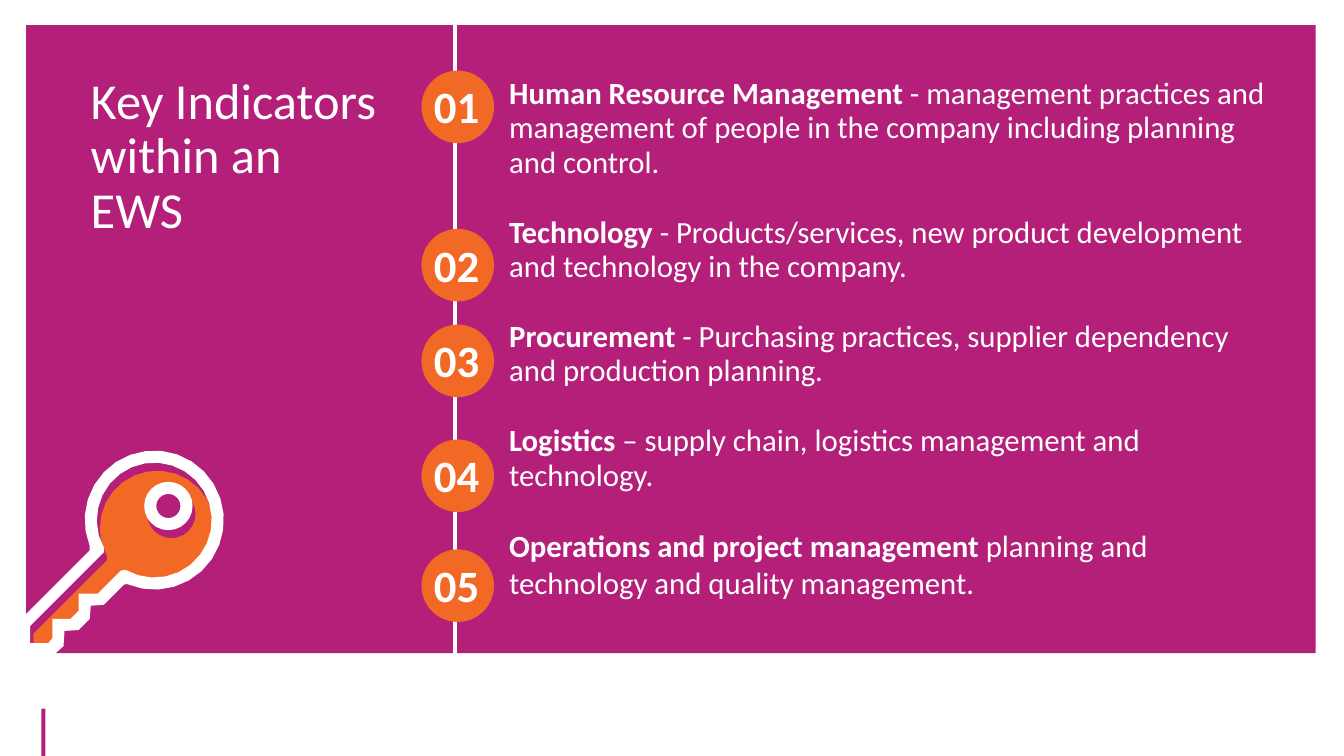
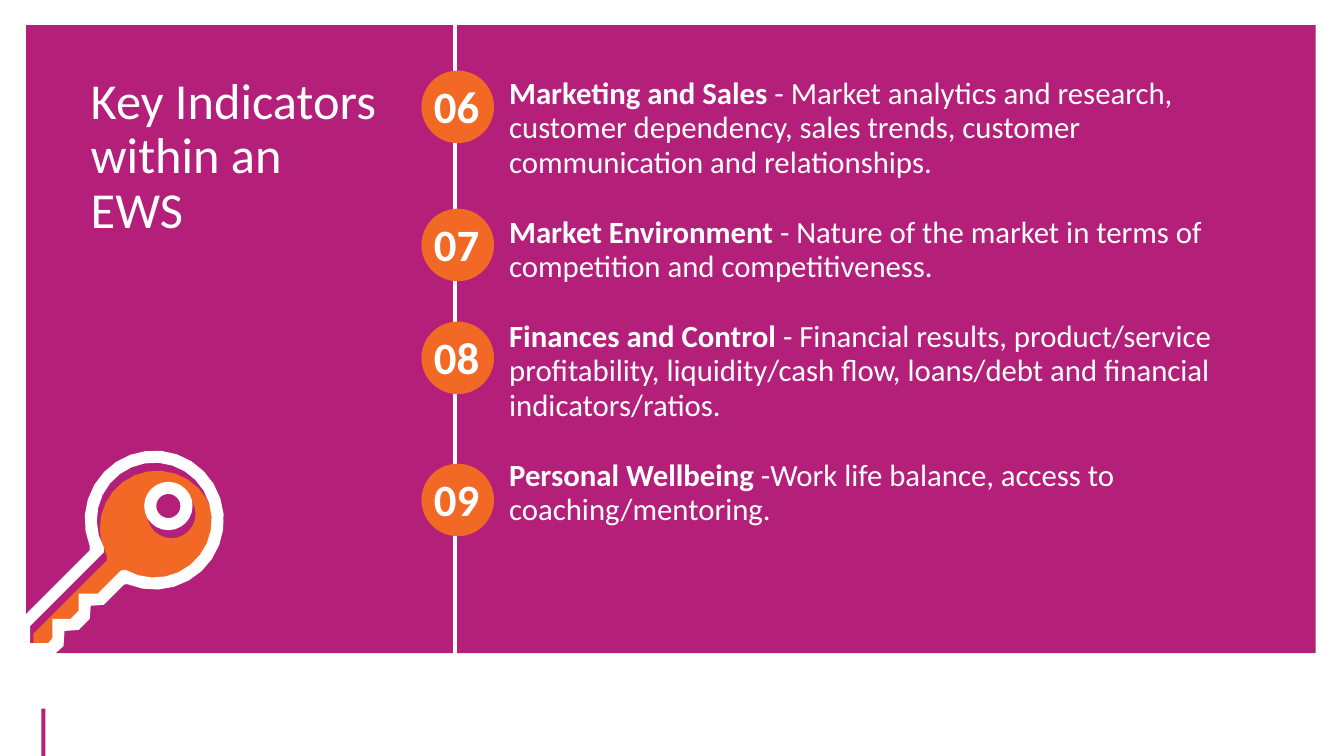
import math

from lxml import etree
from pptx import Presentation
from pptx.dml.color import RGBColor
from pptx.enum import shapes, text
from pptx.oxml import ns
from pptx.util import Inches, Pt

MAGENTA = RGBColor(0xB4, 0x1F, 0x7A)
ORANGE = RGBColor(0xF1, 0x69, 0x24)
WHITE = RGBColor(0xFF, 0xFF, 0xFF)
FONT = "Calibri"

HEADING = "Key Indicators within an EWS"
LINE_HEIGHT = Pt(24.8)
TOP = 0.7
SPINE_X = 4.51
MARKER_LEFT, MARKER_SIZE = 4.18, 0.72

# Key geometry, in inches on the page
BOW_CENTER = (1.53, 5.16)
EYE_CENTER = (1.67, 5.02)
EYE_RADIUS = 0.24
FILL_OFFSET = (0.03, 0.08)

# Each page: (number, top of marker, name, description)
PAGES = [
    [
        ("01", 0.7, "Human Resource Management ",
         "- management practices and management of people in the company "
         "including planning and control."),
        ("02", 2.27, "Technology",
         " - Products/services, new product development and technology in the company."),
        ("03", 3.22, "Procurement",
         " - Purchasing practices, supplier dependency and production planning."),
        ("04", 4.36, "Logistics",
         " – supply chain, logistics management and technology."),
        ("05", 5.45, "Operations and project management ",
         "planning and technology and quality management."),
    ],
    [
        ("06", 0.7, "Marketing and Sales ",
         "- Market analytics and research, customer dependency, sales trends, "
         "customer communication and relationships."),
        ("07", 2.07, "Market Environment ",
         "- Nature of the market in terms of competition and competitiveness."),
        ("08", 3.19, "Finances and Control ",
         "- Financial results, product/service profitability, liquidity/cash flow, "
         "loans/debt and financial indicators/ratios."),
        ("09", 4.6, "Personal Wellbeing ",
         "-Work life balance, access to coaching/mentoring."),
    ],
]


def paint(shape, color):
    shape.shadow.inherit = False
    shape.fill.solid()
    shape.fill.fore_color.rgb = color
    shape.line.fill.background()


def add_filled(page, kind, left, top, width, height, color):
    shape = page.shapes.add_shape(
        kind, Inches(left), Inches(top), Inches(width), Inches(height))
    paint(shape, color)
    return shape


def add_span(para, words, size, bold=False):
    span = para.add_run()
    span.text = words
    span.font.name = FONT
    span.font.size = Pt(size)
    span.font.bold = bold
    span.font.color.rgb = WHITE


def top_frame(placeholder):
    """Return the placeholder's text frame, wrapped and anchored at the top."""
    frame = placeholder.text_frame
    frame.word_wrap = True
    frame.auto_size = text.MSO_AUTO_SIZE.NONE
    frame.vertical_anchor = text.MSO_ANCHOR.TOP
    return frame


def place(placeholder, left, top, width, height):
    placeholder.left, placeholder.top = Inches(left), Inches(top)
    placeholder.width, placeholder.height = Inches(width), Inches(height)


def prepare_layout(layout, page):
    """Give the layout its band, footer accent and placeholder positions."""
    rectangle = shapes.MSO_SHAPE.RECTANGLE
    band = add_filled(page, rectangle, 0.26, 0.25, 12.79, 6.23, MAGENTA)
    accent = add_filled(page, rectangle, 0.41, 7.03, 0.04, 0.47, MAGENTA)
    for shape in (band, accent):
        layout.shapes.element.append(shape.element)
    place(layout.placeholders[0], 0.8, TOP, 3.12, 3.05)
    place(layout.placeholders[1], 4.5, TOP, 8.28, 6.8)


def add_heading(page):
    para = top_frame(page.shapes.title).paragraphs[0]
    para.alignment = text.PP_ALIGN.LEFT
    para.line_spacing = 0.9
    add_span(para, HEADING, 36)


def add_indicators(page, indicators):
    frame = top_frame(page.placeholders[1])
    for index, (number, _, name, description) in enumerate(indicators):
        para = frame.add_paragraph() if index else frame.paragraphs[0]
        props = para._p.get_or_add_pPr()
        props.set("marL", str(Inches(0.45)))
        props.set("indent", "0")
        etree.SubElement(props, ns.qn("a:buNone"))
        para.space_before = LINE_HEIGHT if index else Pt(0)
        para.line_spacing = 1.0 if number == "05" else LINE_HEIGHT
        add_span(para, name, 22, bold=True)
        add_span(para, description, 22)


def add_spine(page):
    spine = page.shapes.add_connector(
        shapes.MSO_CONNECTOR.STRAIGHT,
        Inches(SPINE_X), Inches(0.22), Inches(SPINE_X), Inches(6.49))
    spine.line.color.rgb = WHITE
    spine.line.width = Pt(3)
    etree.SubElement(spine.element.spPr, ns.qn("a:effectLst"))


def add_marker(page, number, top):
    marker = add_filled(page, shapes.MSO_SHAPE.OVAL, MARKER_LEFT, top,
                        MARKER_SIZE, MARKER_SIZE, ORANGE)
    frame = marker.text_frame
    frame.word_wrap = False
    frame.margin_left = frame.margin_top = 0
    frame.margin_right = frame.margin_bottom = Inches(0.02)
    frame.vertical_anchor = text.MSO_ANCHOR.MIDDLE
    para = frame.paragraphs[0]
    para.alignment = text.PP_ALIGN.CENTER
    add_span(para, number, 32, bold=True)


def arc(center, radius, start, end, steps):
    """Points of an arc; degrees run clockwise from the right."""
    angles = [math.radians(start + (end - start) * step / steps)
              for step in range(steps + 1)]
    return [(center[0] + radius * math.cos(angle),
             center[1] + radius * math.sin(angle)) for angle in angles]


def circle(center, radius):
    return arc(center, radius, 0, 345, 23)


def shifted(points):
    return [(x + FILL_OFFSET[0], y + FILL_OFFSET[1]) for x, y in points]


def add_outline(page, contours, color):
    """Draw closed contours as one shape; inner contours become holes."""
    builder = None
    for contour in contours:
        points = [(Inches(x), Inches(y)) for x, y in contour]
        if builder is None:
            builder = page.shapes.build_freeform(*points[0])
        else:
            builder.move_to(*points[0])
        builder.add_line_segments(points[1:], close=True)
    paint(builder.convert_to_shape(), color)


def add_key(page):
    outer = [(0.19, 6.16), (0.89, 5.46)]
    outer += arc(BOW_CENTER, 0.69, 158, 473, 24)
    outer += [(1.23, 5.8), (1.03, 6), (0.9, 6.01), (0.89, 6.14),
              (0.78, 6.25), (0.64, 6.26), (0.63, 6.41), (0.53, 6.5),
              (0.19, 6.5)]
    inner = [(0.78, 5.89), (0.97, 5.89), (1.2, 5.66)]
    inner += arc(BOW_CENTER, 0.57, 480, 151, 24)
    inner += [(1.03, 5.48), (0.3, 6.21), (0.3, 6.38), (0.48, 6.38),
              (0.52, 6.33), (0.52, 6.14), (0.7, 6.14), (0.78, 6.06)]
    eye = circle(EYE_CENTER, EYE_RADIUS)
    pupil = circle(EYE_CENTER, EYE_RADIUS / 2)[::-1]
    add_outline(page, [shifted(inner), shifted(eye)], ORANGE)
    add_outline(page, [outer, inner], WHITE)
    add_outline(page, [eye, pupil], WHITE)


def main():
    deck = Presentation()
    deck.slide_width, deck.slide_height = Inches(13.33), Inches(7.5)
    layout = deck.slide_layouts[1]
    for index, indicators in enumerate(PAGES):
        page = deck.slides.add_slide(layout)
        if index == 0:
            prepare_layout(layout, page)
        add_heading(page)
        add_indicators(page, indicators)
        add_spine(page)
        for number, top, _, _ in indicators:
            add_marker(page, number, top)
        add_key(page)
    deck.save("out.pptx")


if __name__ == "__main__":
    main()
